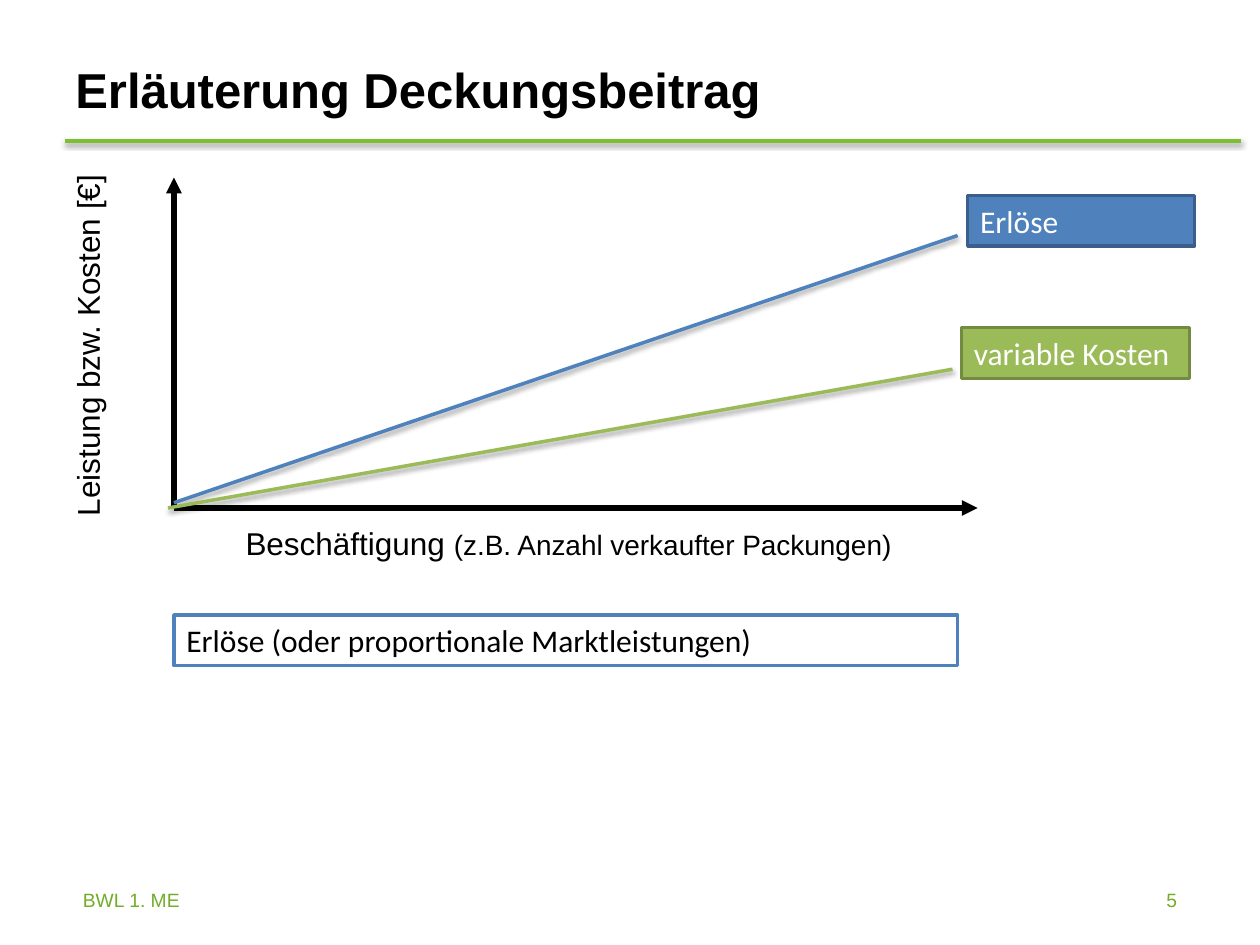
from lxml import etree
from pptx import Presentation
from pptx.dml.color import RGBColor
from pptx.enum import shapes, text
from pptx.oxml import ns
from pptx.util import Pt

COLORS = {
    "black": "000000", "white": "FFFFFF", "rule": "7CBF33", "footer": "71AD2A",
    "blue": "4F81BD", "blue edge": "3A5F8C",
    "green": "9BBB59", "green edge": "738A42",
}

# Lines: start, end, colour, width, ending ("arrow" or "shadow")
LINES = [
    ((36.9, 80.6), (709.2, 80.6), "rule", 2, "shadow"),
    ((99.4, 289), (99.4, 101.5), "black", 3, "arrow"),
    ((99.4, 290.3), (558.7, 290.3), "black", 3, "arrow"),
    ((99.4, 287.3), (547.2, 134.6), "blue", 2, "shadow"),
    ((96, 290.3), (544.3, 211), "green", 2, "shadow"),
]

# Boxes: left, top, width, height, runs of (text, size), then format values
BOXES = [
    ((36, 26.6, 640, 48.2), [("Erläuterung Deckungsbeitrag", 28)],
     {"bold": True, "anchor": text.MSO_ANCHOR.MIDDLE}),
    ((553, 111.6, 129.6, 29), [("Erlöse", 18)],
     {"fill": "blue", "edge": "blue edge", "color": "white", "font": "Calibri"}),
    ((549.4, 187.2, 130.3, 29), [("variable Kosten", 18)],
     {"fill": "green", "edge": "green edge", "color": "white", "font": "Calibri"}),
    ((133.2, 296, 396.7, 29),
     [("Beschäftigung ", 18), ("(z.B. Anzahl verkaufter Packungen)", 16)],
     {"fill": "white"}),
    ((-57.6, 180, 215.3, 29), [("Leistung bzw. Kosten [€]", 18)],
     {"rotation": 270}),
    ((99.4, 351.4, 447.8, 29), [("Erlöse (oder proportionale Marktleistungen)", 18)],
     {"fill": "white", "edge": "blue", "font": "Calibri"}),
    ((40.3, 504, 640, 23.8), [("BWL 1. ME", 11)], {"color": "footer"}),
    ((529.9, 504, 149.8, 23.8), [("5", 11)],
     {"color": "footer", "align": text.PP_ALIGN.RIGHT}),
]


def rgb(name):
    return RGBColor.from_string(COLORS[name])


def add_child(parent, tag, **attributes):
    return etree.SubElement(parent, ns.qn(tag), attributes)


def add_line(slide, start, end, color, width, ending):
    line = slide.shapes.add_connector(
        shapes.MSO_CONNECTOR.STRAIGHT, *(Pt(value) for value in start + end))
    line.line.color.rgb = rgb(color)
    line.line.width = Pt(width)
    properties = line._element.spPr
    if ending == "arrow":
        add_child(properties.find(ns.qn("a:ln")), "a:tailEnd", type="triangle")
    effects = add_child(properties, "a:effectLst")
    if ending == "shadow":
        shadow = add_child(effects, "a:outerShdw", blurRad=str(Pt(3.1)),
                           dist=str(Pt(1.6)), dir="5400000", rotWithShape="0")
        shade = add_child(shadow, "a:srgbClr", val=COLORS["black"])
        add_child(shade, "a:alpha", val="38000")


def add_box(slide, place, runs, style):
    place = [Pt(value) for value in place]
    if "fill" in style:
        shape = slide.shapes.add_shape(shapes.MSO_SHAPE.RECTANGLE, *place)
        shape.shadow.inherit = False
        shape.fill.solid()
        shape.fill.fore_color.rgb = rgb(style["fill"])
        if "edge" in style:
            shape.line.color.rgb = rgb(style["edge"])
            shape.line.width = Pt(2)
        else:
            shape.line.fill.background()
    else:
        shape = slide.shapes.add_textbox(*place)
    shape.rotation = style.get("rotation", 0)

    frame = shape.text_frame
    frame.word_wrap = True
    frame.vertical_anchor = style.get("anchor", text.MSO_ANCHOR.TOP)
    paragraph = frame.paragraphs[0]
    paragraph.alignment = style.get("align", text.PP_ALIGN.LEFT)
    for words, size in runs:
        run = paragraph.add_run()
        run.text = words
        values = {"size": Pt(size), "name": style.get("font", "Arial"),
                  "bold": style.get("bold", False)}
        for attribute, value in values.items():
            setattr(run.font, attribute, value)
        run.font.color.rgb = rgb(style.get("color", "black"))


def main():
    presentation = Presentation()
    presentation.slide_width, presentation.slide_height = Pt(720), Pt(540)
    slide = presentation.slides.add_slide(presentation.slide_layouts[6])

    # Title rule, axes and cost lines
    for line in LINES:
        add_line(slide, *line)

    # Title, labels and footer
    for box in BOXES:
        add_box(slide, *box)

    presentation.save("out.pptx")


if __name__ == "__main__":
    main()
